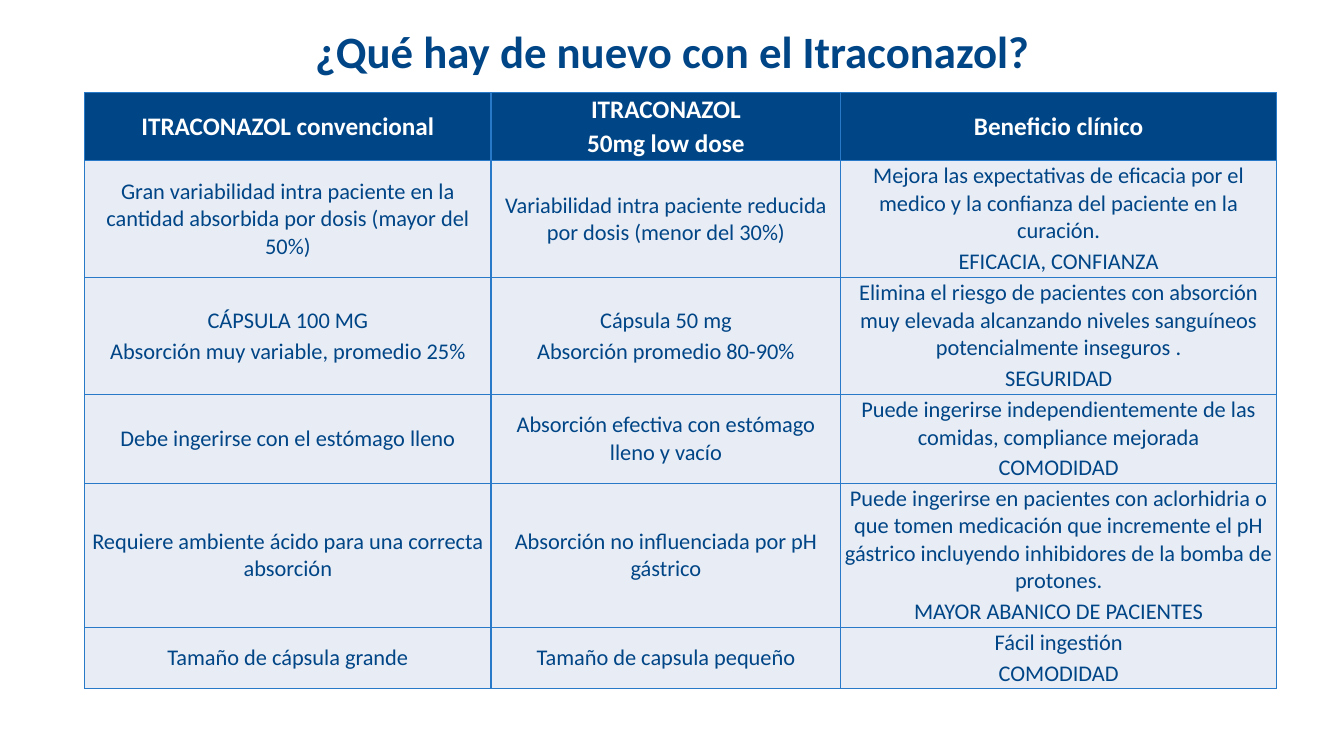
import pptx
import pptx.util
import pptx.dml.color
import pptx.enum.text
from lxml import etree

Inches = pptx.util.Inches
Pt = pptx.util.Pt
CENTER = pptx.enum.text.PP_ALIGN.CENTER
MIDDLE = pptx.enum.text.MSO_ANCHOR.MIDDLE
NS = "http://schemas.openxmlformats.org/drawingml/2006/main"

COLORS = {"navy": "004586", "pale": "E8ECF5", "line": "287AC8", "white": "FFFFFF"}
WIDTHS = [4.03, 3.47, 4.32]
HEIGHTS = [0.67, 1.16, 1.16, 0.88, 1.43, 0.61]

# Each cell is a list of paragraphs
ROWS = [
    [["ITRACONAZOL convencional"],
     ["ITRACONAZOL", "50mg low dose"],
     ["Beneficio clínico"]],
    [["Gran variabilidad intra paciente en la cantidad absorbida por dosis (mayor del 50%)"],
     ["Variabilidad intra paciente reducida por dosis (menor del 30%)"],
     ["Mejora las expectativas de eficacia por el medico y la confianza del paciente "
      "en la curación.", "EFICACIA, CONFIANZA"]],
    [["CÁPSULA 100 MG", "Absorción muy variable, promedio 25%"],
     ["Cápsula 50 mg", "Absorción promedio 80-90%"],
     ["Elimina el riesgo de pacientes con absorción muy elevada alcanzando niveles "
      "sanguíneos potencialmente inseguros .", "SEGURIDAD"]],
    [["Debe ingerirse con el estómago lleno"],
     ["Absorción efectiva con estómago lleno y vacío"],
     ["Puede ingerirse independientemente de las comidas, compliance mejorada",
      "COMODIDAD"]],
    [["Requiere ambiente ácido para una correcta absorción"],
     ["Absorción no influenciada por pH gástrico"],
     ["Puede ingerirse en pacientes con aclorhidria o que tomen medicación que "
      "incremente el pH gástrico incluyendo inhibidores de la bomba de protones.",
      "MAYOR ABANICO DE PACIENTES"]],
    [["Tamaño de cápsula grande"],
     ["Tamaño de capsula pequeño"],
     ["Fácil ingestión", "COMODIDAD"]],
]


def rgb(name):
    return pptx.dml.color.RGBColor.from_string(COLORS[name])


def write(frame, lines, size, color, bold):
    for i, line in enumerate(lines):
        para = frame.paragraphs[0] if i == 0 else frame.add_paragraph()
        para.alignment = CENTER
        para.space_before = Pt(2.4 if i else 0)
        run = para.add_run()
        run.text = line
        run.font.name = "Calibri"
        run.font.size = Pt(size)
        run.font.bold = bold
        run.font.color.rgb = rgb(color)


def add_title(slide, text):
    box = slide.shapes.add_textbox(Inches(0.67), Inches(0.17), Inches(12), Inches(0.66))
    box.text_frame.word_wrap = True
    box.text_frame.vertical_anchor = MIDDLE
    write(box.text_frame, [text], 32, "navy", True)


def set_border(cell):
    props = cell._tc.get_or_add_tcPr()
    # Borders go before the cell fill
    for i, side in enumerate(("lnL", "lnR", "lnT", "lnB")):
        line = etree.Element(f"{{{NS}}}{side}", w=str(Pt(1)))
        fill = etree.SubElement(line, f"{{{NS}}}solidFill")
        etree.SubElement(fill, f"{{{NS}}}srgbClr", val=COLORS["line"])
        props.insert(i, line)


def fill_cell(cell, lines, head):
    cell.margin_left = cell.margin_right = Inches(0.02)
    cell.margin_top = cell.margin_bottom = Inches(0.02)
    cell.vertical_anchor = MIDDLE
    cell.fill.solid()
    cell.fill.fore_color.rgb = rgb("navy" if head else "pale")
    set_border(cell)
    write(cell.text_frame, lines, 18 if head else 16, "white" if head else "navy", head)


def add_grid(slide):
    table = slide.shapes.add_table(
        len(ROWS), len(WIDTHS), Inches(0.84), Inches(0.92),
        Inches(sum(WIDTHS)), Inches(sum(HEIGHTS))).table
    for col, width in zip(table.columns, WIDTHS):
        col.width = Inches(width)
    for r, (height, row) in enumerate(zip(HEIGHTS, ROWS)):
        table.rows[r].height = Inches(height)
        for c, lines in enumerate(row):
            fill_cell(table.cell(r, c), lines, r == 0)


def main():
    deck = pptx.Presentation()
    deck.slide_width = Inches(13.33)
    deck.slide_height = Inches(7.5)
    slide = deck.slides.add_slide(deck.slide_layouts[6])
    add_title(slide, "¿Qué hay de nuevo con el Itraconazol?")
    add_grid(slide)
    deck.save("out.pptx")


if __name__ == "__main__":
    main()
